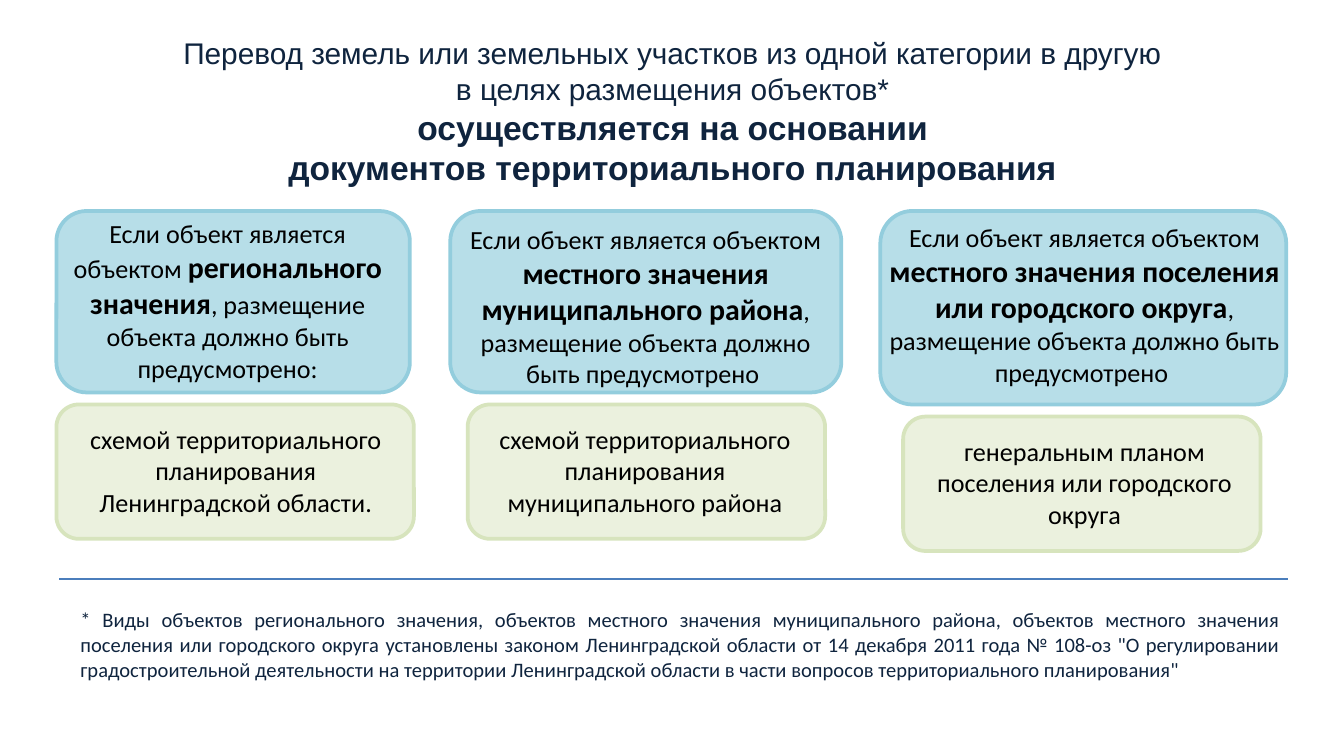
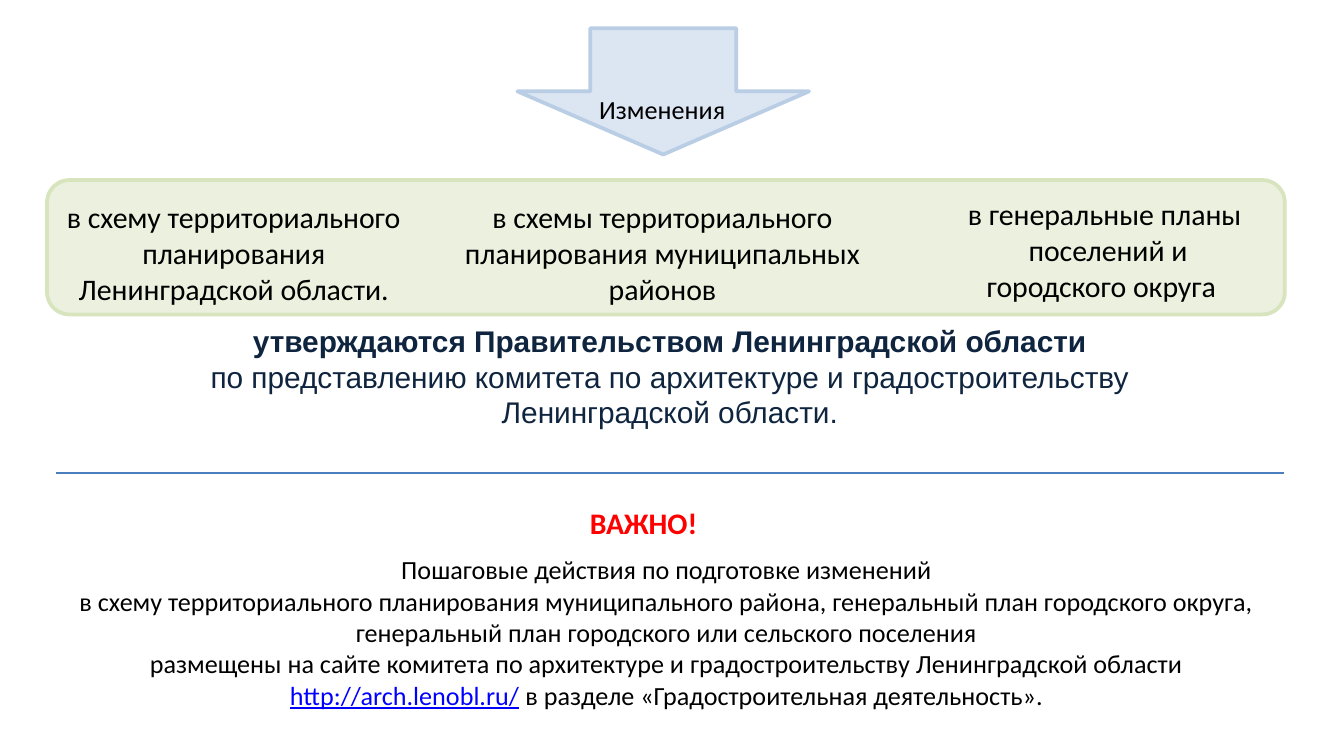
from lxml import etree
from pptx import Presentation
from pptx.dml.color import RGBColor
from pptx.enum import shapes, text
from pptx.oxml import ns
from pptx.util import Inches, Pt

COLORS = {
    "navy": "0F243E", "black": "000000", "red": "FF0000", "link": "0000FF",
    "rule": "4B7EBC",
    "blue": "B7DEE8", "blue_edge": "93CDDD",
    "green": "EBF1DE", "green_edge": "D7E4BD",
    "arrow": "DCE6F2", "arrow_edge": "B9CDE5",
}
ALIGN = {"left": text.PP_ALIGN.LEFT, "center": text.PP_ALIGN.CENTER,
         "justify": text.PP_ALIGN.JUSTIFY}
ROUND = shapes.MSO_SHAPE.ROUNDED_RECTANGLE
ARROW = shapes.MSO_SHAPE.DOWN_ARROW
BIG = {"size": 16, "bold": True}
TITLE = {"font": "Arial", "color": "navy", "size": 16}

# Content: a paragraph is a string or a list of (text, format) spans
HEADING = [
    "Перевод земель или земельных участков из одной категории в другую",
    "в целях размещения объектов*",
    [("осуществляется на основании", {"size": 18, "bold": True})],
    [("документов территориального планирования", {"size": 18, "bold": True})],
]
CASE_START = "Если объект является объектом "
CASE_END = ", размещение объекта должно быть предусмотрено"
# Boxes are left, top, width, height in inches
CASES = [
    {"level": "регионального значения", "tail": ":",
     "case_box": (0.42, 1.57, 2.63, 1.35), "case_text": (0.33, 1.57, 2.73, 1.35),
     "plan": "схемой территориального планирования Ленинградской области.",
     "plan_box": (0.42, 3.01), "plan_text": (0.57, 2.37)},
    {"level": "местного значения муниципального района", "tail": " ",
     "case_box": (3.35, 1.57, 2.91, 1.35), "case_text": (3.35, 1.61, 2.91, 1.35),
     "plan": "схемой территориального планирования муниципального района",
     "plan_box": (3.48, 3.01), "plan_text": (3.55, 2.5)},
    {"level": "местного значения поселения или городского округа", "tail": " ",
     "case_box": (6.55, 1.57, 3.02, 1.44), "case_text": (6.51, 1.6, 3.12, 1.38),
     "plan": "генеральным планом поселения или городского округа",
     "plan_box": (6.72, 3.1), "plan_text": (6.82, 2.5)},
]
FOOTNOTE = [
    "* Виды объектов регионального значения, объектов местного значения "
    "муниципального района, объектов местного значения поселения или городского "
    "округа установлены законом Ленинградской области от 14 декабря 2011 года "
    "№ 108-оз \"О регулировании градостроительной деятельности на территории "
    "Ленинградской области в части вопросов территориального планирования\"",
]
AMENDED_PLANS = [
    ((0.35, 1.43, 2.78, 0.91),
     ["в схему территориального планирования Ленинградской области."]),
    ((3.05, 1.43, 3.76, 0.91),
     ["в схемы территориального планирования муниципальных районов"]),
    ((6.97, 1.41, 2.5, 0.91),
     ["в генеральные планы", " поселений и городского округа "]),
]
APPROVAL = [
    [("утверждаются Правительством Ленинградской области", {"bold": True})],
    "по представлению комитета по архитектуре и градостроительству",
    "Ленинградской области.",
]
GUIDANCE = [
    "Пошаговые действия по подготовке изменений",
    "в схему территориального планирования муниципального района, генеральный "
    "план городского округа, генеральный план городского или сельского поселения",
    [("размещены на сайте комитета по архитектуре и градостроительству "
      "Ленинградской области ", {}),
     ("http://arch.lenobl.ru/", {"color": "link", "underline": True}),
     (" в разделе «Градостроительная деятельность».", {})],
]


def rgb(name):
    return RGBColor.from_string(COLORS[name])


def add_text(page, area, paragraphs, align="center", wrap=True, **base):
    """Add a text box; span formats override the base format."""
    box = page.shapes.add_textbox(*map(Inches, area))
    frame = box.text_frame
    frame.word_wrap = wrap
    frame.auto_size = text.MSO_AUTO_SIZE.SHAPE_TO_FIT_TEXT
    for index, content in enumerate(paragraphs):
        para = frame.add_paragraph() if index else frame.paragraphs[0]
        para.alignment = ALIGN[align]
        spans = [(content, {})] if isinstance(content, str) else content
        for words, changes in spans:
            look = {"font": "Calibri", "size": 14, "color": "black", **base, **changes}
            span = para.add_run()
            span.text = words
            span.font.name = look["font"]
            span.font.size = Pt(look["size"])
            span.font.color.rgb = rgb(look["color"])
            span.font.bold = look.get("bold", False)
            span.font.underline = look.get("underline", False)


def add_panel(page, kind, area, color):
    panel = page.shapes.add_shape(kind, *map(Inches, area))
    panel.shadow.inherit = False
    panel.fill.solid()
    panel.fill.fore_color.rgb = rgb(color)
    panel.line.color.rgb = rgb(color + "_edge")
    panel.line.width = Pt(2)


def add_rule(page, left, right, top):
    rule = page.shapes.add_connector(
        shapes.MSO_CONNECTOR.STRAIGHT, *map(Inches, (left, top, right, top)))
    rule.line.color.rgb = rgb("rule")
    rule.line.width = Pt(1)
    etree.SubElement(rule._element.spPr, ns.qn("a:effectLst"))


def build_grounds_page(page):
    # Panels, green plans behind blue cases
    for case in reversed(CASES):
        add_panel(page, ROUND, (*case["plan_box"], 2.66, 1), "green")
    for case in reversed(CASES):
        add_panel(page, ROUND, case["case_box"], "blue")

    # Heading and column texts
    add_text(page, (0.44, 0.21, 9.13, 1.25), HEADING, **TITLE)
    for case in CASES:
        add_text(page, case["case_text"],
                 [[(CASE_START, {}), (case["level"], BIG),
                   (CASE_END + case["tail"], {})]])
        left, width = case["plan_text"]
        top = case["plan_box"][1] + 0.09
        add_text(page, (left, top, width, 0.81), [case["plan"]])

    # Footnote
    add_rule(page, 0.44, 9.58, 4.31)
    add_text(page, (0.5, 4.47, 9.13, 0.66), FOOTNOTE, align="justify",
             size=11, color="navy")


def build_changes_page(page):
    # Arrow and the plans being amended
    add_panel(page, ROUND, (0.35, 1.34, 9.21, 1), "green")
    add_panel(page, ARROW, (3.85, 0.21, 2.17, 0.94), "arrow")
    add_text(page, (4.36, 0.62, 1.2, 0.37),
             [[("Изменения", {}), (" ", {"size": 16})]], align="left", wrap=False)
    for area, plan in AMENDED_PLANS:
        add_text(page, area, plan, size=16)

    # Approval
    add_text(page, (0.42, 2.35, 9.13, 0.91), APPROVAL, **TITLE)
    add_rule(page, 0.42, 9.55, 3.52)

    # Guidance
    add_text(page, (4.29, 3.71, 1.02, 0.37), ["ВАЖНО!"], align="left",
             wrap=False, color="red", **BIG)
    add_text(page, (0.42, 4.07, 9.08, 1.28), GUIDANCE)


def main():
    deck = Presentation()
    # Widescreen, 16:9
    deck.slide_width = Inches(10)
    deck.slide_height = Inches(10) * 9 // 16
    for build in (build_grounds_page, build_changes_page):
        build(deck.slides.add_slide(deck.slide_layouts[6]))
    deck.save("out.pptx")


if __name__ == "__main__":
    main()
